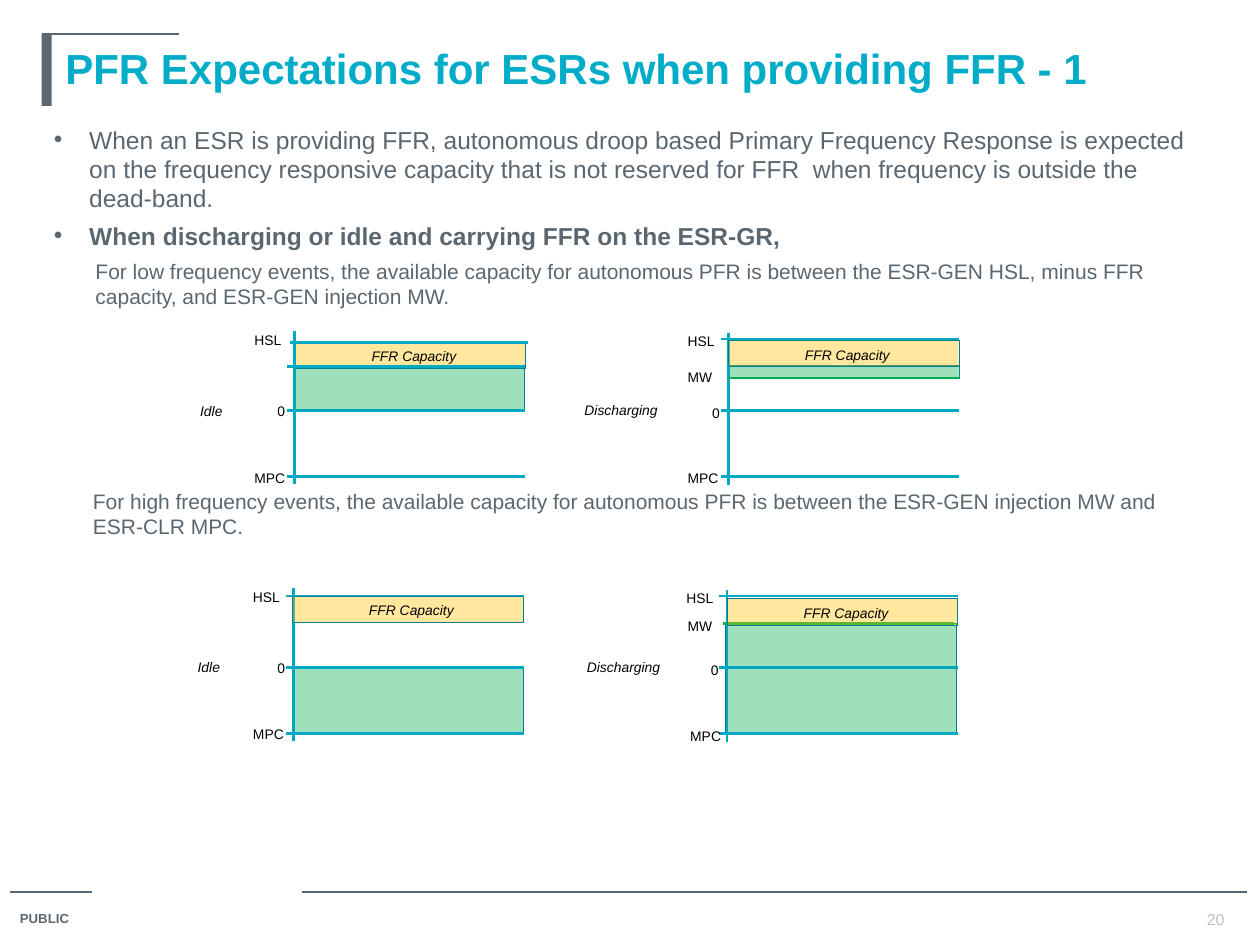
from lxml import etree
from pptx import Presentation
from pptx.dml.color import RGBColor
from pptx.enum import shapes, text
from pptx.oxml.ns import qn
from pptx.util import Inches, Pt

SLATE = RGBColor(0x5B, 0x67, 0x70)
TITLE_CYAN = RGBColor(0x00, 0xAC, 0xC8)
CYAN = RGBColor(0x00, 0xA8, 0xC4)
EDGE = RGBColor(0x00, 0x7F, 0x94)
AMBER = RGBColor(0xFF, 0xC0, 0x00)
GREEN = RGBColor(0x00, 0xB0, 0x50)
GREY = RGBColor(0xBF, 0xBF, 0xBF)
BLACK = RGBColor(0, 0, 0)

TITLE = "PFR Expectations for ESRs when providing FFR - 1"
# Paragraphs: text, size, bold, bullet, left margin
INTRO = [
    ("When an ESR is providing FFR, autonomous droop based Primary Frequency "
     "Response is expected on the frequency responsive capacity that is not "
     "reserved for FFR  when frequency is outside the dead-band.",
     14, False, True, 0.28),
    ("When discharging or idle and carrying FFR on the ESR-GR,",
     14, True, True, 0.28),
    ("For low frequency events, the available capacity for autonomous PFR is "
     "between the ESR-GEN HSL, minus FFR capacity, and ESR-GEN injection MW.",
     12, False, False, 0.33),
]
HIGH_FREQUENCY = [
    ("For high frequency events, the available capacity for autonomous PFR is "
     "between the ESR-GEN injection MW and ESR-CLR MPC.",
     12, False, False, 0.31),
]

BAR_WIDTH, FFR_HEIGHT = 1.83, 0.21
TICK, LEVEL_WIDTH, AXIS_HEIGHT = 0.06, 1.89, 1.21
LABEL_HEIGHT = 0.23

# axis: x, top; available: x, top, height; ffr: x, top; levels: y values;
# extra: x, y, width, colour; labels: text, x, y; state: text, x, y
DIAGRAMS = [
    dict(axis=(2.34, 2.63), available=(2.33, 2.91, 0.35), ffr=(2.34, 2.71),
         levels=(2.91, 3.26, 3.78), extra=(2.30, 2.72, LEVEL_WIDTH, CYAN),
         labels=[("HSL", 1.92, 2.58), ("0", 2.11, 3.15), ("MPC", 1.92, 3.68)],
         state=("Idle", 1.49, 3.15), lines_in_front=True),
    dict(axis=(5.78, 2.64), available=(5.78, 2.9, 0.1), ffr=(5.78, 2.7),
         levels=(2.69, 3.26, 3.78), extra=(5.78, 3, BAR_WIDTH, GREEN),
         labels=[("HSL", 5.36, 2.59), ("MW", 5.36, 2.88), ("0", 5.56, 3.16),
                 ("MPC", 5.36, 3.68)],
         state=("Discharging", 4.54, 3.14), lines_in_front=False),
    dict(axis=(2.33, 4.67), available=(2.32, 5.3, 0.53), ffr=(2.32, 4.73),
         levels=(4.73, 5.3, 5.82), extra=None,
         labels=[("HSL", 1.91, 4.62), ("0", 2.11, 5.19), ("MPC", 1.91, 5.71)],
         state=("Idle", 1.47, 5.18), lines_in_front=False),
    dict(axis=(5.77, 4.68), available=(5.76, 4.95, 0.87), ffr=(5.77, 4.75),
         levels=(4.73, 5.3, 5.82), extra=(5.74, 4.95, BAR_WIDTH, GREEN),
         labels=[("HSL", 5.35, 4.63), ("MW", 5.36, 4.85), ("0", 5.55, 5.2),
                 ("MPC", 5.38, 5.73)],
         state=("Discharging", 4.56, 5.18), lines_in_front=False),
]


def add_line(page, x1, y1, x2, y2, colour=CYAN, weight=1.5):
    line = page.shapes.add_connector(shapes.MSO_CONNECTOR.STRAIGHT, Inches(x1),
                                     Inches(y1), Inches(x2), Inches(y2))
    line.line.color.rgb = colour
    line.line.width = Pt(weight)
    etree.SubElement(line._element.spPr, qn("a:effectLst"))


def add_bar(page, x, y, width, height, colour, translucent=True):
    bar = page.shapes.add_shape(shapes.MSO_SHAPE.RECTANGLE, Inches(x),
                                Inches(y), Inches(width), Inches(height))
    bar.shadow.inherit = False
    bar.fill.solid()
    bar.fill.fore_color.rgb = colour
    if not translucent:
        bar.line.fill.background()
        return
    bar.line.color.rgb = EDGE
    bar.line.width = Pt(0.25)
    fill_colour = bar._element.spPr.find(qn("a:solidFill"))[0]
    etree.SubElement(fill_colour, qn("a:alpha"), val="38000")


def set_font(font, size, colour, bold=False, italic=False):
    font.name = "Arial"
    font.size = Pt(size)
    font.color.rgb = colour
    font.bold = bold
    font.italic = italic


def add_box(page, x, y, width, height):
    box = page.shapes.add_textbox(Inches(x), Inches(y), Inches(width), Inches(height))
    box.text_frame.word_wrap = True
    return box.text_frame


def add_label(page, words, x, y, width, height=LABEL_HEIGHT, size=7.9,
              colour=BLACK, bold=False, italic=False):
    frame = add_box(page, x, y, width, height)
    frame.text = words
    frame.vertical_anchor = text.MSO_ANCHOR.MIDDLE
    set_font(frame.paragraphs[0].runs[0].font, size, colour, bold, italic)


def add_paragraphs(page, x, y, width, height, content):
    frame = add_box(page, x, y, width, height)
    for index, (words, size, bold, bullet, margin) in enumerate(content):
        para = frame.paragraphs[0] if index == 0 else frame.add_paragraph()
        para.text = words
        if index:
            para.space_before = Pt(4.5)
        props = para._p.get_or_add_pPr()
        props.set("marL", str(Inches(margin)))
        props.set("indent", str(-Inches(margin) if bullet else 0))
        if bullet:
            etree.SubElement(props, qn("a:buFont"), typeface="Arial")
            etree.SubElement(props, qn("a:buChar"), char="•")
        set_font(para.runs[0].font, size, SLATE, bold)


def add_ffr(page, x, y):
    add_bar(page, x, y, BAR_WIDTH, FFR_HEIGHT, AMBER)


def add_diagram(page, diagram):
    axis_x, axis_top = diagram["axis"]
    x, y, height = diagram["available"]
    add_bar(page, x, y, BAR_WIDTH, height, GREEN)
    if diagram["lines_in_front"]:
        add_ffr(page, *diagram["ffr"])

    # Axis and capacity levels
    add_line(page, axis_x, axis_top, axis_x, axis_top + AXIS_HEIGHT)
    for level in diagram["levels"]:
        start = axis_x - TICK
        add_line(page, start, level, start + LEVEL_WIDTH, level)
    if diagram["extra"]:
        x, y, width, colour = diagram["extra"]
        add_line(page, x, y, x + width, y, colour)
    if not diagram["lines_in_front"]:
        add_ffr(page, *diagram["ffr"])

    # Labels
    for words, x, y in diagram["labels"]:
        add_label(page, words, x, y, 0.19 if words == "0" else 0.53)
    words, x, y = diagram["state"]
    add_label(page, words, x, y, 0.92, italic=True)
    x, y = diagram["ffr"]
    add_label(page, "FFR Capacity", x + 0.51, y, 0.95, italic=True)


def main():
    deck = Presentation()
    deck.slide_width, deck.slide_height = Inches(10), Inches(7.5)
    page = deck.slides.add_slide(deck.slide_layouts[6])

    # Footer
    add_line(page, 0.08, 7.08, 0.73, 7.08, SLATE, 0.75)
    add_line(page, 2.4, 7.08, 9.9, 7.08, SLATE, 0.75)
    add_label(page, "PUBLIC", 0.06, 7.17, 0.77, size=7.5, colour=SLATE, bold=True)
    add_label(page, "20", 9.48, 7.18, 0.42, size=9, colour=GREY)

    # Title with its corner mark
    add_bar(page, 0.33, 0.27, 0.08, 0.57, SLATE, translucent=False)
    add_line(page, 0.33, 0.27, 1.42, 0.27, SLATE, 0.75)
    add_label(page, TITLE, 0.42, 0.25, 9.25, 0.57, 24, TITLE_CYAN, bold=True)

    # Body text and diagrams
    add_paragraphs(page, 0.33, 0.94, 9.33, 1.6, INTRO)
    add_paragraphs(page, 0.33, 3.83, 9.33, 0.5, HIGH_FREQUENCY)
    for diagram in DIAGRAMS:
        add_diagram(page, diagram)

    deck.save("out.pptx")


if __name__ == "__main__":
    main()
